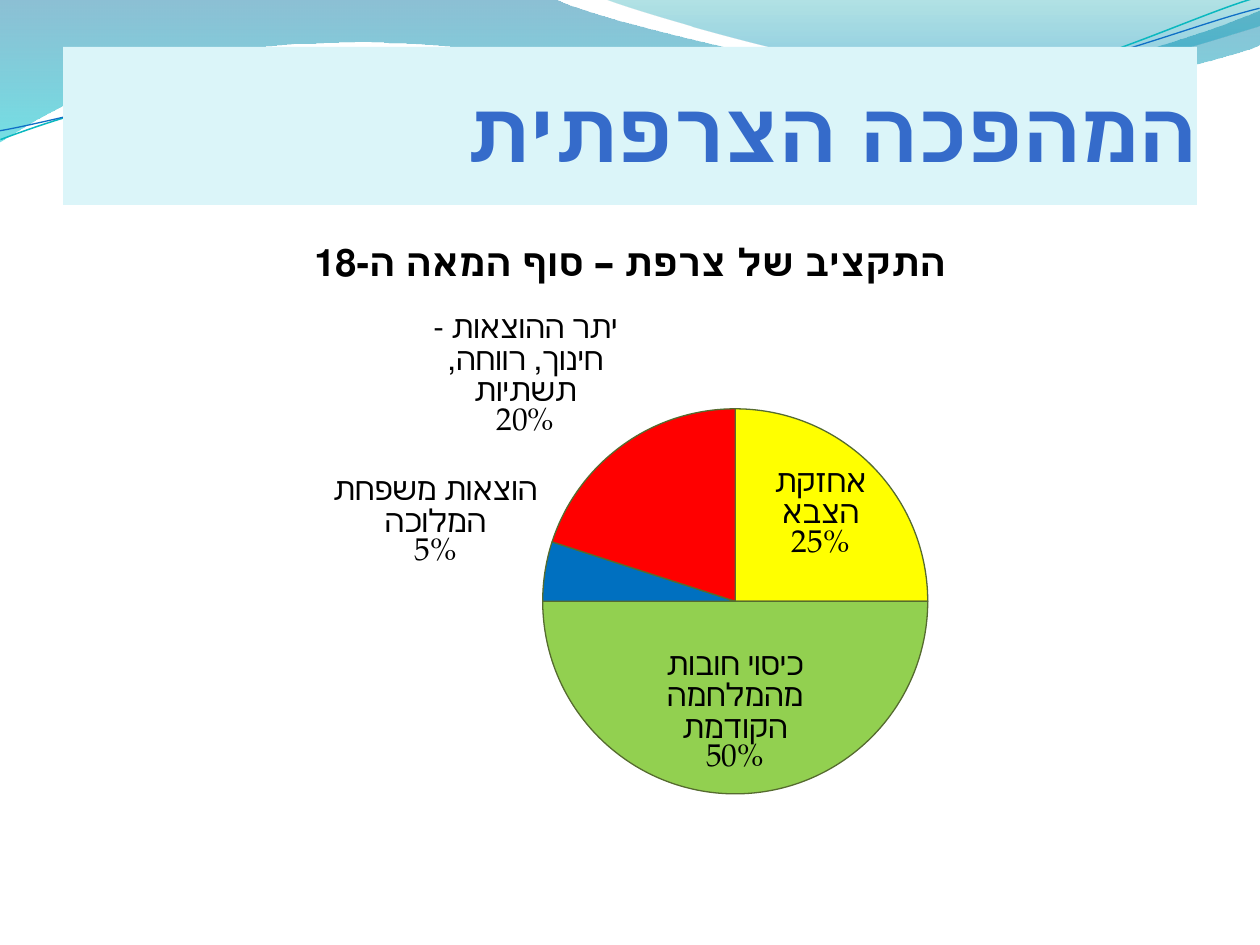
"""Build the slide on the French budget before the Revolution."""
from lxml.etree import SubElement
from pptx import Presentation
from pptx.chart.data import CategoryChartData
from pptx.dml.color import RGBColor
from pptx.enum.chart import XL_CHART_TYPE as ChartType, XL_LABEL_POSITION as LabelPos
from pptx.enum.text import MSO_ANCHOR as Anchor, PP_ALIGN as Align
from pptx.oxml.ns import qn
from pptx.util import Emu, Pt


def px(length):
    return Emu(round(length * 914400 / 126))


def rgb(color):
    return RGBColor.from_string(color)


prs = Presentation()
prs.slide_width, prs.slide_height = px(1260), px(945)
slide = prs.slides.add_slide(prs.slide_layouts[5])

waves = [
    ((0, 0), [[(554, -1)], [(600, 21), (837, 79), (955, 79)],
              [(1075, 79), (1207, 33), (1260, 11)], [(1261, 45)],
              [(1239, 55), (1096, 96), (940, 95)],
              [(781, 95), (481, 35), (324, 43)],
              [(162, 45), (58, 105), (-1, 142)]],
     [(0, "0074A1", 45), (1, "00C6CF", 55)], None),
    ((604, -1), [[(641, 14), (859, 78), (969, 82)],
                 [(1079, 87), (1211, 40), (1260, 26)], [(1260, 0)]],
     [(0, "00A1A9", 30), (0.8, "008BBF", 45)], None),
    ((-2, 110), [[(59, 90), (199, 52), (350, 53)],
                 [(499, 53), (745, 118), (896, 114)],
                 [(1049, 109), (1184, 45), (1260, 27)]],
     None, ("0AB8BF", 0.85)),
    ((-2, 101), [[(57, 94), (208, 57), (358, 58)],
                 [(509, 58), (750, 112), (902, 108)],
                 [(1052, 104), (1188, 52), (1262, 38)]],
     None, ("0F6FC6", 0.75)),
]
for start, segments, gradient, stroke in waves:
    builder = slide.shapes.build_freeform(px(start[0]), px(start[1]))
    builder.add_line_segments([(px(x), px(y)) for segment in segments for x, y in segment],
                              close=gradient is not None)
    wave = builder.convert_to_shape()
    wave.shadow.inherit = False
    steps = iter(list(wave.element.spPr.iter(qn("a:lnTo"))))
    for segment in segments:
        first, *others = [next(steps) for point in segment]
        if others:
            first.tag = qn("a:cubicBezTo")
        for other in others:
            first.append(other[0])
            other.getparent().remove(other)
    if gradient:
        wave.line.fill.background()
        wave.fill.gradient()
        wave.fill.gradient_angle = 270
        for stop, (position, color, opacity) in zip(wave.fill.gradient_stops, gradient):
            stop.position = position
            stop.color.rgb = rgb(color)
        for tint, (position, color, opacity) in zip(
                wave.element.spPr.iter(qn("a:srgbClr")), gradient):
            SubElement(tint, qn("a:alpha")).set("val", str(opacity * 1000))
    else:
        wave.rotation = 357.3
        wave.fill.background()
        wave.line.color.rgb = rgb(stroke[0])
        wave.line.width = Pt(stroke[1])

title = slide.shapes.title
slide.shapes.element.append(title.element)
title.left, title.top, title.width, title.height = px(63), px(47), px(1134), px(158)
title.fill.solid()
title.fill.fore_color.rgb = rgb("DBF5F9")
heading = title.text_frame
heading.margin_left = heading.margin_right = heading.margin_bottom = 0
heading.margin_top = px(6)
heading.vertical_anchor = Anchor.MIDDLE
heading_line = heading.paragraphs[0]
heading_line.alignment = Align.RIGHT
heading_line._p.get_or_add_pPr().set("rtl", "1")
heading_run = heading_line.add_run()
heading_run.text = "המהפכה הצרפתית"
heading_run.font.size = Pt(48)
heading_run.font.bold = True
heading_run.font.color.rgb = rgb("356BCA")
heading_run.font.name = "Calibri"

expenses = [
    ("אחזקת הצבא", 25, "FFFF00"),
    ("כיסוי חובות מהמלחמה הקודמת", 50, "92D050"),
    ("הוצאות משפחת המלוכה", 5, "0070C0"),
    ("יתר ההוצאות - חינוך, רווחה, תשתיות", 20, "FF0000"),
]
budget = CategoryChartData()
budget.categories = [name for name, share, color in expenses]
budget.add_series("Series 1", [share for name, share, color in expenses])
chart = slide.shapes.add_chart(
    ChartType.PIE, px(25), px(214), px(1211), px(731), budget).chart
chart.has_legend = False
chart.font.size = Pt(18)
chart.font.name = "TeX Gyre Pagella"
chart.font.color.rgb = rgb("000000")

chart.has_title = True
caption = chart.chart_title.text_frame.paragraphs[0].add_run()
caption.text = "התקציב של צרפת – סוף המאה ה-18"
caption.font.size = Pt(21.6)
caption.font.bold = True
caption.font.color.rgb = rgb("000000")
chart.chart_title.include_in_layout = False

pie = chart.plots[0]
pie.vary_by_categories = True
for index, (name, share, color) in enumerate(expenses):
    slice_format = pie.series[0].points[index].format
    slice_format.fill.solid()
    slice_format.fill.fore_color.rgb = rgb(color)
    slice_format.line.color.rgb = rgb("556B2F")
    slice_format.line.width = Pt(0.75)

pie.has_data_labels = True
labels = pie.data_labels
labels.show_value = False
labels.show_category_name = True
labels.show_percentage = True
labels.number_format = "0%"
labels.number_format_is_linked = False
labels.position = LabelPos.BEST_FIT
separator = SubElement(labels._element, qn("c:separator"))
separator.text = "\n"
labels._element.find(qn("c:showBubbleSize")).addnext(separator)

plot_area = chart._chartSpace.chart.plotArea
layout = plot_area.find(qn("c:layout"))
if layout is None:
    layout = SubElement(plot_area, qn("c:layout"))
    plot_area.insert(0, layout)
manual = SubElement(layout, qn("c:manualLayout"))
for tag, value in [("layoutTarget", "inner"), ("xMode", "edge"), ("yMode", "edge"),
                   ("x", "0.4275"), ("y", "0.266"), ("w", "0.318"), ("h", "0.528")]:
    SubElement(manual, qn(f"c:{tag}")).set("val", value)

prs.save("out.pptx")
